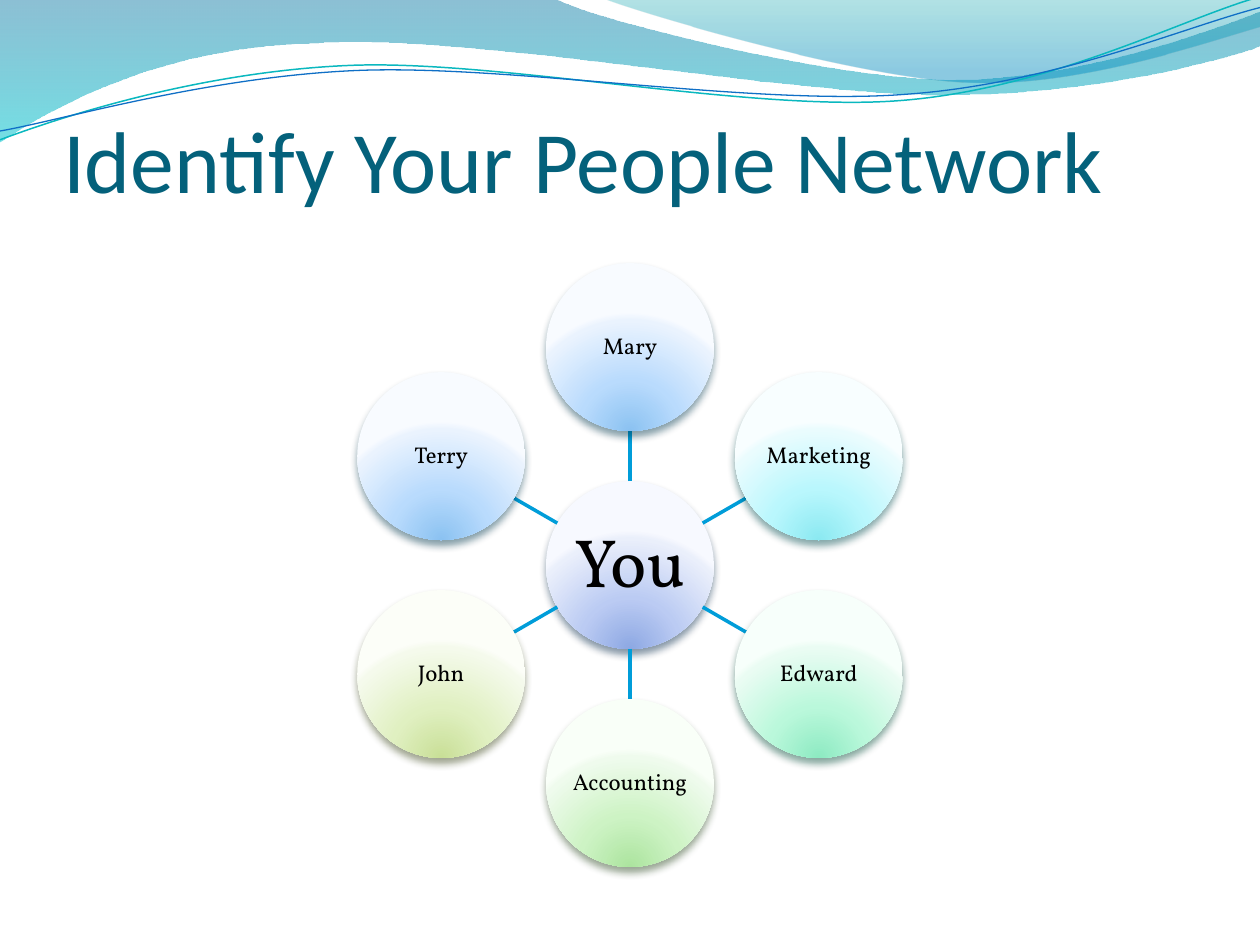
import math
import pptx
import pptx.util
import pptx.dml.color
import pptx.enum.shapes
import pptx.enum.text
import pptx.oxml
import pptx.oxml.ns
from lxml import etree

Pt = pptx.util.Pt
qn = pptx.oxml.ns.qn
SPACE = 'xmlns:a="http://schemas.openxmlformats.org/drawingml/2006/main"'
MIDDLE = pptx.enum.text.MSO_ANCHOR.MIDDLE
BOTTOM = pptx.enum.text.MSO_ANCHOR.BOTTOM
CENTER = pptx.enum.text.PP_ALIGN.CENTER
LEFT = pptx.enum.text.PP_ALIGN.LEFT

BANDS = [
    ((0, 0), [(440, -1), (476, 17, 664, 63, 758, 63), (853, 63, 958, 26, 1000, 9),
              (1001, 36), (983, 44, 870, 76, 746, 75), (622, 75, 382, 28, 257, 34),
              (129, 36, 46, 83, -1, 113)],
     [(0, "0074A1", 45), (100, "00C6CF", 55)]),
    ((479, -1), [(509, 11, 682, 62, 769, 65), (856, 69, 961, 32, 1000, 21), (1000, 0)],
     [(0, "00A1A9", 30), (80, "008BBF", 45)]),
]
WAVES = [
    ((0, 111), [(48, 93, 158, 57, 277, 52), (395, 47, 593, 89, 713, 80),
                (833, 71, 938, 15, 998, -2)], "0AB8BF", 0.85),
    ((0, 104), [(47, 96, 164, 61, 283, 56), (403, 51, 597, 84, 717, 75),
                (836, 67, 941, 21, 1000, 6)], "0F6FC6", 0.75),
]
BLUE = ("8BC2F1", "B9DBFD", "EAF3FE", "F8FBFF"), "00374C"
HUB = "You", (("8DA8E3", "BBCBF3", "EAEFFB", "F7F9FF"), "042747")
NODES = [
    ("Mary", BLUE),
    ("Marketing", (("8BE9F1", "B9F7FD", "EAFCFE", "F8FEFF"), "024B4E")),
    ("Edward", (("8DEAC2", "BAF8DB", "EAFCF3", "F7FFFB"), "044A37")),
    ("Accounting", (("ACE49F", "CDF3C4", "EFFBED", "F9FFF8"), "2B4821")),
    ("John", (("C9DF97", "E0F0C1", "F5FAEC", "FCFEF8"), "3A4519")),
    ("Terry", BLUE),
]


def tint(text):
    return pptx.dml.color.RGBColor.from_string(text)


def apply(thing, form):
    for name, value in form.items():
        setattr(thing, name, value)


def write(shape, text, size, face, hue, align, frame):
    body = shape.text_frame
    apply(body, frame)
    body.text = text
    para = body.paragraphs[0]
    para.alignment = align
    apply(para.font, {"size": Pt(size), "name": face})
    para.font.color.rgb = tint(hue)
    return para


def blend(shape, stops, course):
    shape.fill.gradient()
    grad = shape._element.spPr.find(qn("a:gradFill"))
    marks = "".join(
        f'<a:gs pos="{spot * 1000}"><a:srgbClr val="{hue}">'
        f'<a:alpha val="{alpha * 1000}"/></a:srgbClr></a:gs>'
        for spot, hue, alpha in stops)
    fresh = pptx.oxml.parse_xml(
        f'<a:gradFill {SPACE} rotWithShape="1"><a:gsLst>{marks}</a:gsLst>{course}</a:gradFill>')
    grad.getparent().replace(grad, fresh)


def shade(shape, hue):
    shape.shadow.inherit = False
    shape._element.spPr.find(qn("a:effectLst")).append(pptx.oxml.parse_xml(
        f'<a:outerShdw {SPACE} blurRad="{Pt(4.5)}" dist="{Pt(3)}" dir="5400000" rotWithShape="0">'
        f'<a:srgbClr val="{hue}"><a:alpha val="48000"/></a:srgbClr></a:outerShdw>'))


def curve(slide, unit, start, steps, close):
    pen = slide.shapes.build_freeform(*start, scale=unit)
    for step in steps:
        pen.add_line_segments(list(zip(step[::2], step[1::2])), close=False)
    if close:
        pen.add_line_segments([], close=True)
    shape = pen.convert_to_shape()
    lines = iter(list(shape._element.iter(qn("a:lnTo"))))
    for step in steps:
        first = next(lines)
        if len(step) == 6:
            bend = etree.Element(qn("a:cubicBezTo"))
            first.addprevious(bend)
            for line in (first, next(lines), next(lines)):
                bend.append(line[0])
                line.getparent().remove(line)
    shape.shadow.inherit = False
    return shape


def banner(slide, width):
    unit = width / 1000
    for start, steps, stops in BANDS:
        band = curve(slide, unit, start, steps, True)
        blend(band, stops, '<a:lin ang="5400000" scaled="0"/>')
        band.line.fill.background()
    for start, steps, hue, weight in WAVES:
        wave = curve(slide, unit, start, steps, False)
        wave.fill.background()
        wave.line.color.rgb = tint(hue)
        wave.line.width = Pt(weight)


def heading(slide, box):
    title = slide.shapes.title
    slide.shapes._spTree.append(title._element)
    apply(title, dict(zip(("left", "top", "width", "height"), box)))
    write(title, "Identify Your People Network", 50, "Calibri", "04617B", LEFT,
          {"vertical_anchor": BOTTOM, "margin_left": 0, "margin_right": 0,
           "margin_top": Pt(3.6), "margin_bottom": 0, "word_wrap": True,
           "auto_size": pptx.enum.text.MSO_AUTO_SIZE.NONE})


def disc(slide, x, y, size, node, points):
    text, (hues, dark) = node
    shape = slide.shapes.add_shape(
        pptx.enum.shapes.MSO_SHAPE.OVAL, int(x - size / 2), int(y - size / 2), int(size), int(size))
    blend(shape, [(spot, hue, 100) for spot, hue in zip((0, 43, 93, 100), hues)],
          '<a:path path="circle"><a:fillToRect l="50000" t="130000" r="50000" b="-30000"/></a:path>')
    shape.line.fill.background()
    shade(shape, dark)
    sides = dict.fromkeys(("margin_left", "margin_right", "margin_top", "margin_bottom"), Pt(0.7))
    para = write(shape, text, points, "Vollkorn", "000000", CENTER,
                 {"vertical_anchor": MIDDLE, "word_wrap": False, **sides})
    para.line_spacing = 0.9


def spoke(slide, ends):
    line = slide.shapes.add_connector(
        pptx.enum.shapes.MSO_CONNECTOR.STRAIGHT, *(int(end) for end in ends))
    line.line.color.rgb = tint("009DD9")
    line.line.width = Pt(2)
    etree.SubElement(line._element.spPr, qn("a:effectLst"))


def network(slide, box):
    left, top, width, height = box
    x, y = left + width / 2, top + height / 2
    size, orbit = height * 0.278, height * 0.361
    disc(slide, x, y, size, HUB, 39)
    for rank, node in enumerate(NODES):
        angle = math.tau * rank / len(NODES)
        across, down = math.sin(angle), -math.cos(angle)
        near, far = size / 2, orbit - size / 2
        spoke(slide, (x + near * across, y + near * down, x + far * across, y + far * down))
        disc(slide, x + orbit * across, y + orbit * down, size, node, 13)


def main():
    deck = pptx.Presentation()
    deck.slide_width, deck.slide_height = pptx.util.Inches(10), pptx.util.Inches(7.5)
    wide, high = deck.slide_width, deck.slide_height

    def share(*parts):
        return [int(part * whole) for part, whole in zip(parts, (wide, high, wide, high))]

    slide = deck.slides.add_slide(deck.slide_layouts[5])
    banner(slide, wide)
    heading(slide, share(0.05, 0.103, 0.9, 0.12))
    network(slide, share(0.283, 0.2785, 0.434, 0.639))
    deck.save("out.pptx")


if __name__ == "__main__":
    main()
